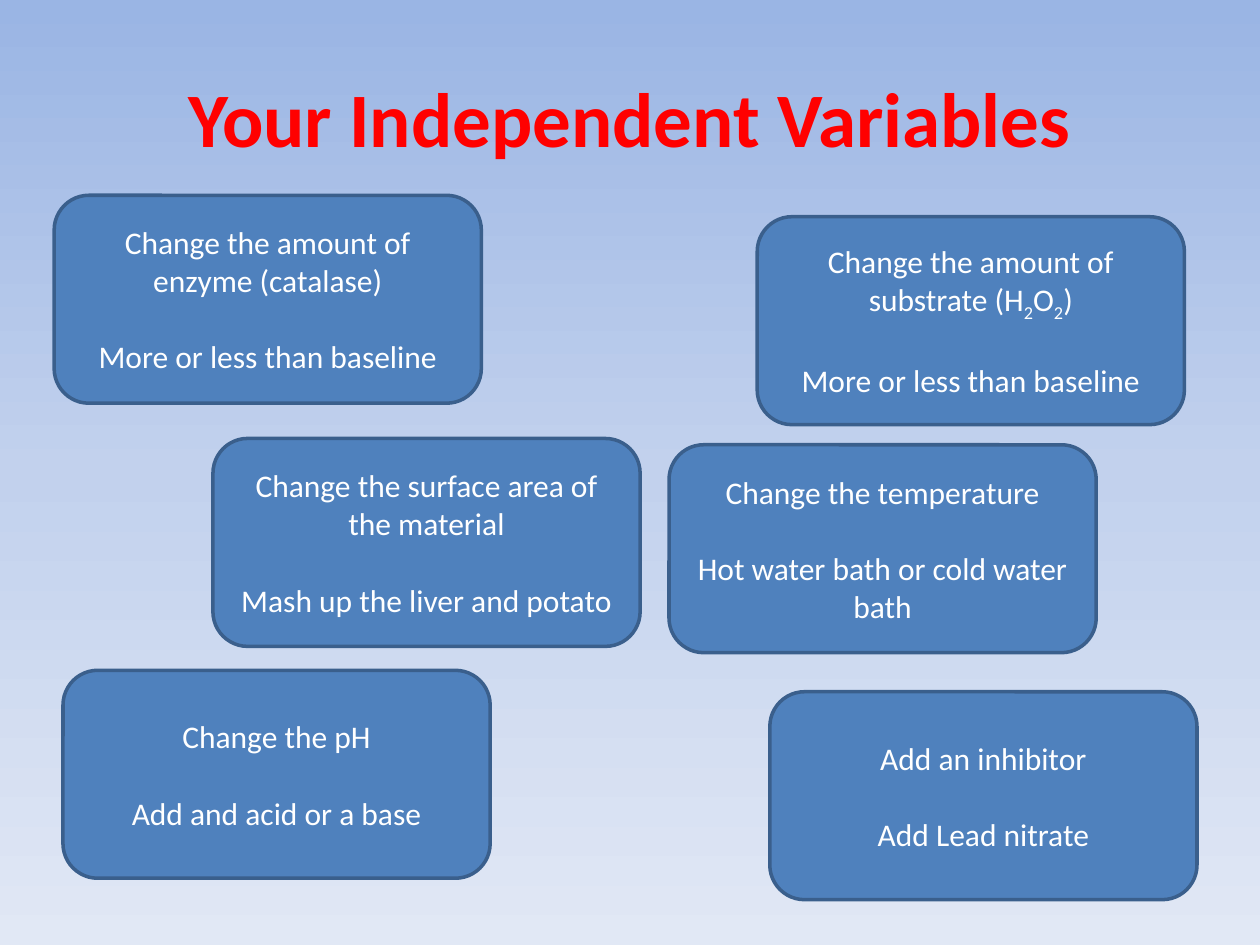
"""Build the slide on independent variables of an enzyme lab."""
from copy import deepcopy
from pptx import Presentation
from pptx.dml.color import RGBColor
from pptx.enum.shapes import MSO_SHAPE
from pptx.enum.text import MSO_ANCHOR, PP_ALIGN
from pptx.oxml.ns import qn
from pptx.util import Inches, Pt

HUES = {"top": "9AB5E4", "mid": "C2D1ED", "low": "E1E8F5", "title": "FF0000",
        "card": "4F81BD", "edge": "3A5F8C", "text": "FFFFFF"}
WIDE, HIGH = 3.39, 1.65
MORE = "More or less than baseline"
CARDS = [
    (0.43, 1.55, ["Change the amount of enzyme (catalase)"], MORE),
    (6.01, 1.72, ["Change the amount of substrate (H", "2", "O", "2", ")"], MORE),
    (1.69, 3.48, ["Change the surface area of the material"],
     "Mash up the liver and potato"),
    (5.31, 3.53, ["Change the temperature"], "Hot water bath or cold water bath"),
    (0.5, 5.32, ["Change the pH"], "Add and acid or a base"),
    (6.11, 5.49, ["Add an inhibitor"], "Add Lead nitrate"),
]


def paint(hue):
    return RGBColor.from_string(HUES[hue])


def write(para, text, size, hue, bold=False):
    para.alignment = PP_ALIGN.CENTER
    run = para.add_run()
    run.text = text
    run.font.name = "Calibri"
    run.font.size = Pt(size)
    run.font.bold = bold
    run.font.color.rgb = paint(hue)
    return run


deck = Presentation()
deck.slide_width, deck.slide_height = Inches(10), Inches(7.5)
slide = deck.slides.add_slide(deck.slide_layouts[6])

fill = slide.background.fill
fill.gradient()
fill.gradient_angle = 270
stops = slide.element.find(".//" + qn("a:gsLst"))
stops.insert(1, deepcopy(stops[0]))
for stop, hue, place in zip(fill.gradient_stops, ["top", "mid", "low"], [0, 0.5, 1]):
    stop.color.rgb = paint(hue)
    stop.position = place

title = slide.shapes.add_textbox(Inches(0.5), Inches(0.3), Inches(9), Inches(1.25))
frame = title.text_frame
frame.word_wrap = True
frame.vertical_anchor = MSO_ANCHOR.MIDDLE
write(frame.paragraphs[0], "Your Independent Variables", 44, "title", True)

for left, top, parts, note in CARDS:
    card = slide.shapes.add_shape(MSO_SHAPE.ROUNDED_RECTANGLE, Inches(left),
                                  Inches(top), Inches(WIDE), Inches(HIGH))
    card.shadow.inherit = False
    card.fill.solid()
    card.fill.fore_color.rgb = paint("card")
    card.line.color.rgb = paint("edge")
    card.line.width = Pt(2)
    frame = card.text_frame
    frame.word_wrap = True
    frame.vertical_anchor = MSO_ANCHOR.MIDDLE
    for part in parts:
        run = write(frame.paragraphs[0], part, 18, "text")
        if part == "2":
            run.font._element.set("baseline", "-25000")
    para = frame.add_paragraph()
    para.space_before = Pt(22)
    write(para, note, 18, "text")

deck.save("out.pptx")
